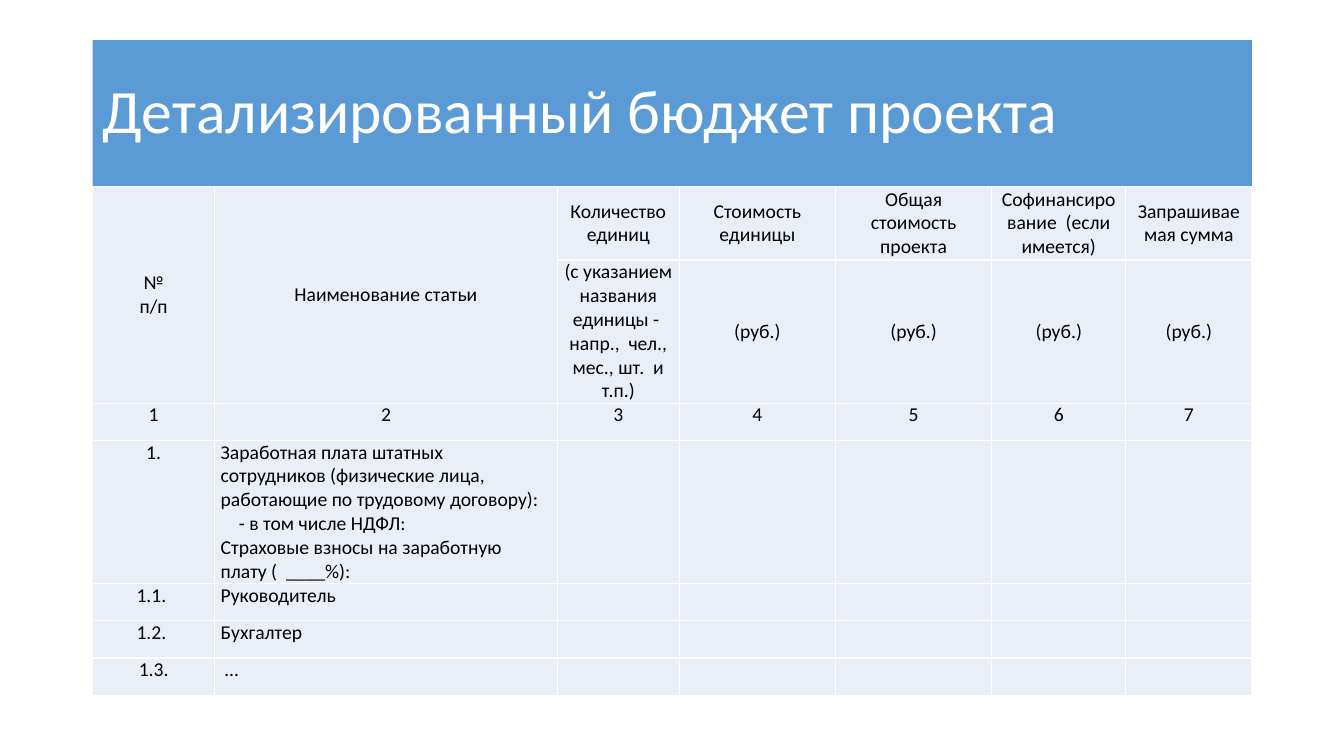
from lxml import etree
from pptx import Presentation
from pptx.dml.color import RGBColor
from pptx.enum.shapes import MSO_SHAPE
from pptx.enum.text import MSO_ANCHOR, PP_ALIGN
from pptx.oxml.ns import qn
from pptx.util import Inches, Pt

RECT = MSO_SHAPE.RECTANGLE
TOP, MIDDLE = MSO_ANCHOR.TOP, MSO_ANCHOR.MIDDLE
LEFT, CENTER = PP_ALIGN.LEFT, PP_ALIGN.CENTER

WHITE, BLACK, BLUE, PALE = "FFFFFF", "000000", "5B9BD5", "EAEFF7"
MARGIN, WIDTH = 6.9, 86.25
TITLE_TOP, TITLE_HEIGHT = 5.33, 19.33

COLUMNS = [1.21, 3.4, 1.21, 1.55, 1.55, 1.33, 1.25]
ROWS = [9.73, 18.93, 4.93, 18.67, 4.93, 4.93, 4.93]
HEADER_ROWS = 2
ARTICLE_COLUMN = 1
RUB = "(руб.)"

BUDGET = [
    [["№", "п/п"], ["Наименование статьи"], ["Количество единиц"],
     ["Стоимость единицы"], ["Общая стоимость проекта"],
     ["Софинансирование  (если имеется)"], ["Запрашиваемая сумма"]],
    [[], [], ["(с указанием названия единицы -  напр.,  чел., мес., шт.  и т.п.)"],
     *[[RUB]] * 4],
    [[str(n + 1)] for n in range(len(COLUMNS))],
    [["1."], ["Заработная плата штатных сотрудников (физические лица, "
              "работающие по трудовому договору):",
              ("- в том числе НДФЛ:", 0.18),
              "Страховые взносы на заработную плату (  ____%):"]],
    [["1.1. "], ["Руководитель"]],
    [["1.2. "], ["Бухгалтер"]],
    [["1.3."], [("…", 0.04)]],
]


def rgb(value):
    return RGBColor.from_string(value)


class Deck:
    """Holds the style and the current slide; lengths are percent of the slide."""

    def __init__(self, prs, font="Calibri"):
        self.prs, self.font = prs, font
        self.s = prs.slides.add_slide(prs.slide_layouts[6])

    def x(self, share):
        return round(self.prs.slide_width * share / 100)

    def y(self, share):
        return round(self.prs.slide_height * share / 100)

    def add_text(self, p, text, size, color, align, indent=0):
        p.alignment = align
        if indent:
            p._p.get_or_add_pPr().set("marL", str(Inches(indent)))
        r = p.add_run()
        r.text = text
        r.font.name, r.font.size = self.font, Pt(size)
        r.font.color.rgb = rgb(color)

    def title(self, text, left, top, width, height):
        sp = self.s.shapes.add_shape(RECT, self.x(left), self.y(top),
                                     self.x(width), self.y(height))
        sp.shadow.inherit = False
        sp.fill.solid()
        sp.fill.fore_color.rgb = rgb(BLUE)
        sp.line.fill.background()
        tf = sp.text_frame
        tf.word_wrap, tf.vertical_anchor = True, MIDDLE
        p = tf.paragraphs[0]
        p.line_spacing = 0.9
        self.add_text(p, text, 44, WHITE, LEFT)

    def borders(self, cell):
        tcPr = cell._tc.get_or_add_tcPr()
        for side in ("a:lnL", "a:lnR", "a:lnT", "a:lnB"):
            ln = etree.SubElement(tcPr, qn(side), w=str(Pt(1)))
            fill = etree.SubElement(ln, qn("a:solidFill"))
            etree.SubElement(fill, qn("a:srgbClr"), val=WHITE)

    def cell(self, cell, lines, align, anchor):
        self.borders(cell)
        cell.fill.solid()
        cell.fill.fore_color.rgb = rgb(PALE)
        cell.margin_left = cell.margin_right = Inches(0.06)
        cell.margin_top = cell.margin_bottom = 0
        cell.vertical_anchor = anchor
        tf = cell.text_frame
        for i, line in enumerate(lines):
            p = tf.add_paragraph() if i else tf.paragraphs[0]
            text, indent = line if isinstance(line, tuple) else (line, 0)
            self.add_text(p, text, 14, BLACK, align, indent)

    def table(self, data, left, top, width):
        table = self.s.shapes.add_table(
            len(ROWS), len(COLUMNS), self.x(left), self.y(top),
            self.x(width), self.y(sum(ROWS))).table
        table.first_row = table.horz_banding = False
        for column, weight in zip(table.columns, COLUMNS):
            column.width = self.x(width * weight / sum(COLUMNS))
        for row, height in zip(table.rows, ROWS):
            row.height = self.y(height)
        for i, row in enumerate(data):
            for j in range(len(COLUMNS)):
                lines = row[j] if j < len(row) else []
                is_article = i > HEADER_ROWS and j == ARTICLE_COLUMN
                self.cell(table.cell(i, j), lines,
                          LEFT if is_article else CENTER,
                          MIDDLE if i < HEADER_ROWS else TOP)
        for j in range(ARTICLE_COLUMN + 1):
            table.cell(0, j).merge(table.cell(HEADER_ROWS - 1, j))


def main():
    prs = Presentation()
    prs.slide_width, prs.slide_height = Inches(13.33), Inches(7.5)
    deck = Deck(prs)
    deck.title("Детализированный бюджет проекта",
               MARGIN, TITLE_TOP, WIDTH, TITLE_HEIGHT)
    deck.table(BUDGET, MARGIN, TITLE_TOP + TITLE_HEIGHT, WIDTH)
    prs.save("out.pptx")


if __name__ == "__main__":
    main()
